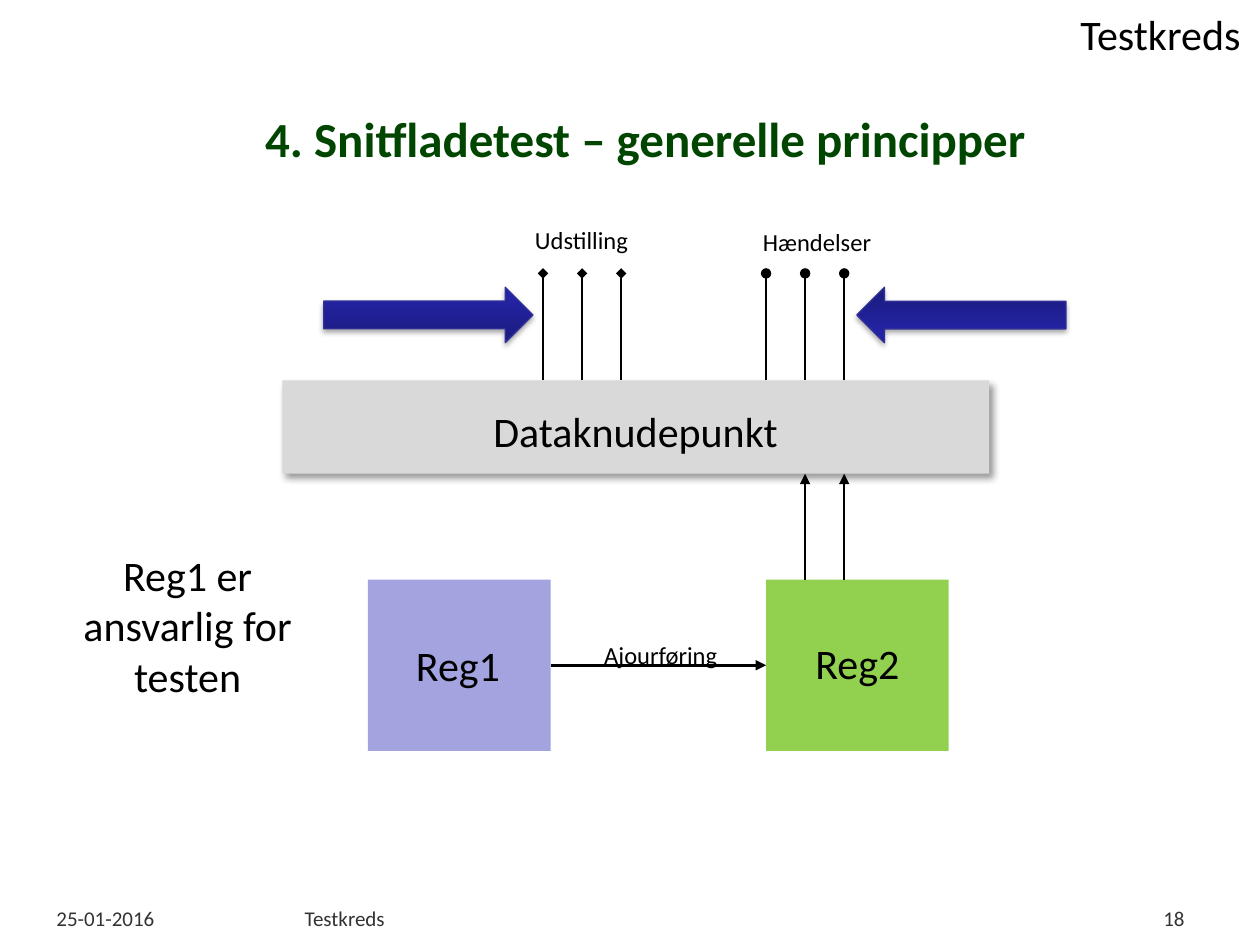
"""Builds the slide on general principles for interface testing."""
from copy import deepcopy

from pptx import Presentation
from pptx.dml.color import RGBColor
from pptx.enum.shapes import MSO_CONNECTOR, MSO_SHAPE
from pptx.enum.text import MSO_ANCHOR, PP_ALIGN
from pptx.oxml import parse_xml
from pptx.oxml.ns import nsdecls, qn
from pptx.util import Inches, Pt

color = RGBColor.from_string
BLACK = "000000"
GREEN = "004600"
GREY = "333333"
LEFT, CENTER, RIGHT = PP_ALIGN.LEFT, PP_ALIGN.CENTER, PP_ALIGN.RIGHT


def add_line(start, end, width, head):
    line = page.shapes.add_connector(MSO_CONNECTOR.STRAIGHT, *map(Inches, start + end))
    line.line.color.rgb = color(BLACK)
    line.line.width = Pt(width)
    line.line._get_or_add_ln().append(parse_xml(f'<a:tailEnd {nsdecls("a")} type="{head}"/>'))
    line._element.spPr.append(parse_xml(f'<a:effectLst {nsdecls("a")}/>'))
    return line


def add_shadow(shape, opacity, blur, distance, angle):
    shape.shadow.inherit = False
    shape._element.spPr.find(qn("a:effectLst")).append(parse_xml(
        f'<a:outerShdw {nsdecls("a")} blurRad="{Pt(blur)}" dist="{Pt(distance)}" '
        f'dir="{angle * 60000}" algn="tl" rotWithShape="0"><a:srgbClr val="{BLACK}">'
        f'<a:alpha val="{opacity * 1000}"/></a:srgbClr></a:outerShdw>'))


deck = Presentation()
deck.slide_width, deck.slide_height = Inches(10), Inches(7.5)
page = deck.slides.add_slide(deck.slide_layouts[6])

blocks = {}
for name, left, top, width, height, fill in [
    ("Reg1", 2.92, 4.6, 1.45, 1.36, "A3A3E0"),
    ("Reg2", 6.08, 4.6, 1.45, 1.36, "92D050"),
    ("Dataknudepunkt", 2.24, 3.02, 5.61, 0.74, "D9D9D9"),
]:
    block = page.shapes.add_shape(MSO_SHAPE.RECTANGLE, *map(Inches, (left, top, width, height)))
    block.fill.solid()
    block.fill.fore_color.rgb = color(fill)
    block.line.fill.background()
    block.shadow.inherit = False
    blocks[name] = block
add_shadow(blocks["Dataknudepunkt"], 40, 4, 3, 45)

update = add_line((4.37, 5.28), (6.08, 5.28), 1.5, "triangle")
update.begin_connect(blocks["Reg1"], 3)
update.end_connect(blocks["Reg2"], 1)

for first, count, bottom, top, head in [
    (6.39, 2, 4.6, 3.76, "triangle"),
    (4.31, 3, 3.02, 2.17, "diamond"),
    (6.08, 3, 3.02, 2.17, "oval"),
]:
    for index in range(count):
        x = first + index * 0.31
        add_line((x, bottom), (x, top), 1.25, head)

for left, rotation in [(2.57, 0), (6.8, 180)]:
    arrow = page.shapes.add_shape(
        MSO_SHAPE.RIGHT_ARROW, Inches(left), Inches(2.28), Inches(1.66), Inches(0.44))
    arrow.rotation = rotation
    arrow.fill.gradient()
    arrow.fill.gradient_angle = 90
    stop_list = arrow._element.spPr.find(".//" + qn("a:gsLst"))
    stop_list.append(deepcopy(stop_list[-1]))
    shades = [(0, "1B1B7E"), (0.8, "2323A3"), (1, "2020A6")]
    for stop, (position, shade) in zip(arrow.fill.gradient_stops, shades):
        stop.position = position
        stop.color.rgb = color(shade)
    arrow.line.color.rgb = color("2F2F98")
    arrow.line.width = Pt(0.75)
    add_shadow(arrow, 35, 3.1, 1.8, 90)

for text, left, top, width, height, size, shade, align in [
    ("Testkreds", 8.42, 0.02, 1.58, 0.5, 24, BLACK, CENTER),
    ("4. Snitfladetest – generelle principper", 0.62, 0.78, 9, 0.63, 28, GREEN, CENTER),
    ("25-01-2016", 0.35, 7.14, 2.37, 0.16, 12, GREY, LEFT),
    ("Testkreds", 2.32, 7.14, 6.22, 0.16, 12, GREY, LEFT),
    ("18", 8.78, 7.14, 0.72, 0.16, 12, GREY, RIGHT),
    ("Reg1", 2.98, 5.03, 1.31, 0.5, 24, BLACK, CENTER),
    ("Reg2", 6.15, 5.01, 1.31, 0.5, 24, BLACK, CENTER),
    ("Dataknudepunkt", 2.24, 3.17, 5.61, 0.5, 24, BLACK, CENTER),
    ("Ajourføring", 4.53, 5.03, 1.43, 0.34, 14, BLACK, CENTER),
    ("Udstilling", 3.9, 1.74, 1.43, 0.34, 14, BLACK, CENTER),
    ("Hændelser", 5.77, 1.75, 1.43, 0.34, 14, BLACK, CENTER),
    ("Reg1 er ansvarlig for testen", 0.41, 4.31, 2.16, 1.31, 24, BLACK, CENTER),
]:
    box = page.shapes.add_textbox(*map(Inches, (left, top, width, height)))
    box.text_frame.word_wrap = True
    box.text_frame.text = text
    if shade == GREEN:
        box.text_frame.vertical_anchor = MSO_ANCHOR.MIDDLE
    para = box.text_frame.paragraphs[0]
    para.alignment = align
    span = para.runs[0]
    span.font.name = "Calibri"
    span.font.size = Pt(size)
    span.font.bold = shade == GREEN
    span.font.color.rgb = color(shade)

deck.save("out.pptx")
